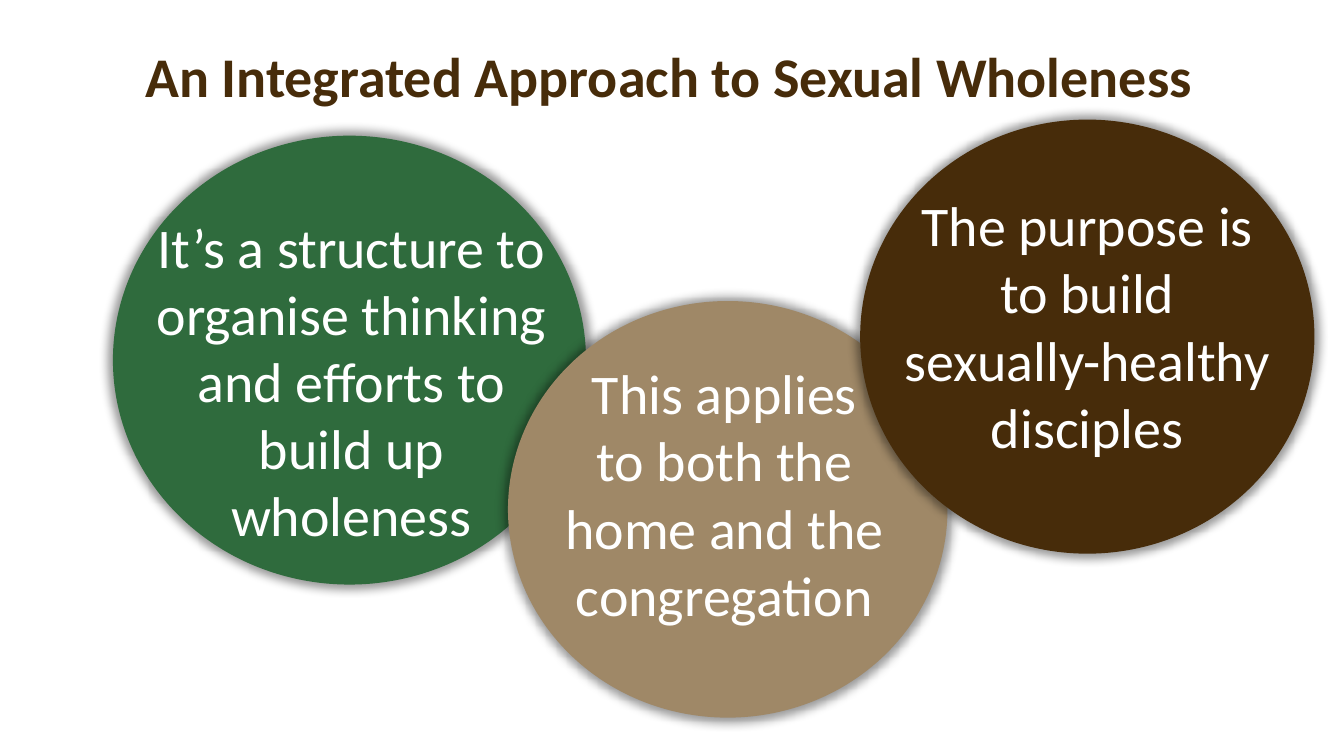
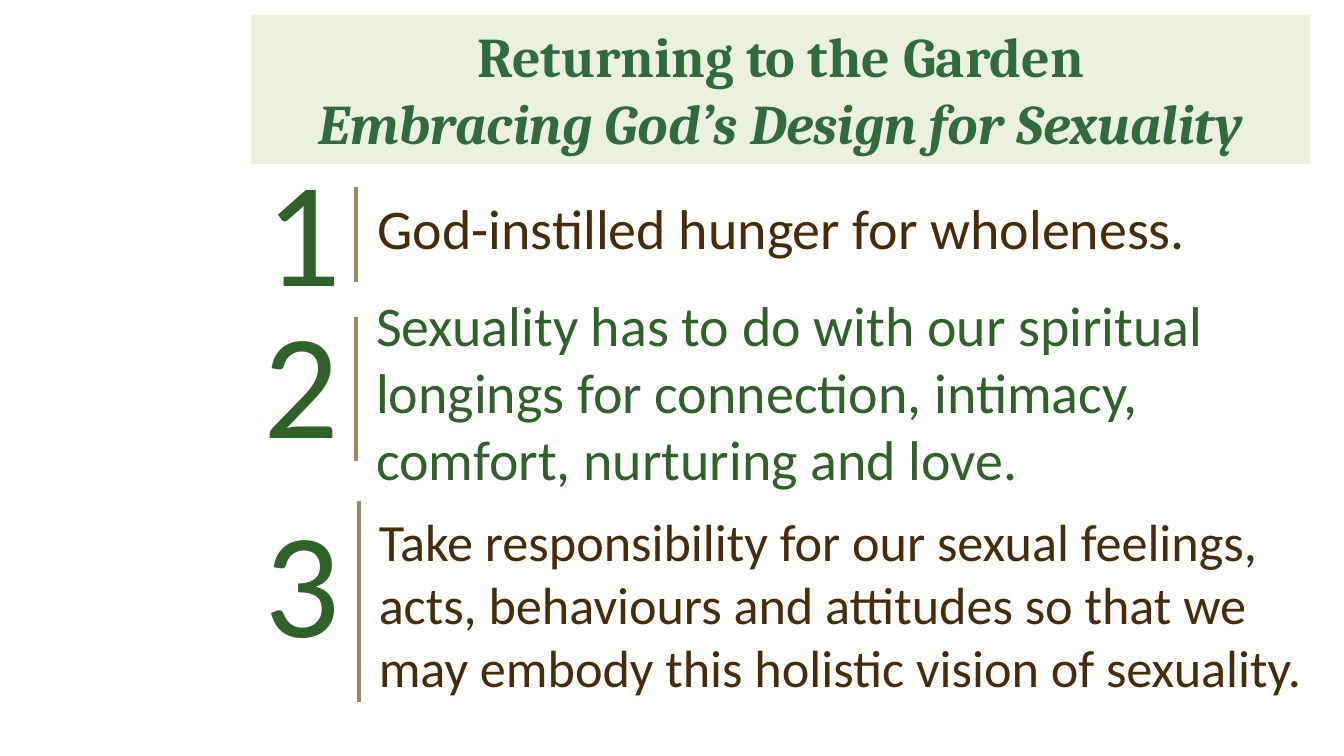
"""Build two slides on an integrated approach to sexual wholeness."""
from dataclasses import dataclass

from lxml import etree
from pptx import Presentation
from pptx import util as u
from pptx.dml import color as dml
from pptx.enum import shapes, text
from pptx.oxml import ns

HUES = {
    "brown": "472C0A",
    "green": "2F6B3D",
    "leaf": "2F6228",
    "tan": "9F8867",
    "pale": "EBF1DE",
    "white": "FFFFFF",
}
LEFT, MID = text.PP_ALIGN.LEFT, text.PP_ALIGN.CENTER
Box = tuple[float, float, float, float]


@dataclass(frozen=True)
class Style:
    size: float
    hue: str
    font: str = "Calibri"
    bold: bool = False
    align: text.PP_ALIGN = LEFT


@dataclass(frozen=True)
class Disc:
    oval: Box
    fill: str
    label: Box
    words: str


@dataclass(frozen=True)
class Point:
    num: Box
    rule: tuple[float, float, float]
    body: Box
    style: Style
    words: str


HEAD = Style(30, "brown", bold=True)
BAND = Style(30, "green", "Cambria", True, MID)
LABEL = Style(30, "white", align=MID)
NUMBER = Style(80, "leaf")

DISCS = [
    Disc((0.84, 1.01, 3.52, 3.34), "green", (1.01, 1.53, 3.21, 3.13),
         "It’s a structure to organise thinking and efforts to build up wholeness"),
    Disc((3.78, 2.24, 3.27, 3.1), "tan", (4.09, 2.62, 2.6, 2.63),
         "This applies to both the home and the congregation"),
    Disc((6.4, 0.89, 3.38, 3.23), "brown", (6.59, 1.37, 3, 2.63),
         "The purpose is to build sexually-healthy disciples"),
]
POINTS = [
    Point((1.88, 0.97, 0.89, 1.45), (2.65, 1.39, 2.1), (2.71, 1.39, 7.16, 0.68),
          Style(30, "brown"), "God-instilled hunger for wholeness."),
    Point((1.86, 2.1, 0.73, 1.45), (2.65, 2.36, 3.43), (2.7, 2.11, 6.81, 1.53),
          Style(30, "leaf"),
          "Sexuality has to do with our spiritual longings for connection, "
          "intimacy, comfort, nurturing and love."),
    Point((1.87, 3.58, 0.78, 1.45), (2.67, 3.73, 5.22), (2.72, 3.74, 7.26, 2.35),
          Style(28, "brown"),
          "Take responsibility for our sexual feelings, acts, behaviours and "
          "attitudes so that we may embody this holistic vision of sexuality."),
]


def tint(name: str) -> dml.RGBColor:
    """Return the named colour."""
    return dml.RGBColor.from_string(HUES[name])


def inch(box) -> list:
    """Turn plain numbers into lengths."""
    return [u.Inches(n) for n in box]


def paint(shape, hue: str) -> None:
    """Give a shape a solid fill."""
    shape.fill.solid()
    shape.fill.fore_color.rgb = tint(hue)


def write(shape, style: Style, *lines: str, slant: int = -1) -> None:
    """Write one paragraph per line, with the line at slant in italics."""
    frame = shape.text_frame
    frame.word_wrap = True
    frame.auto_size = text.MSO_AUTO_SIZE.NONE
    frame.vertical_anchor = text.MSO_ANCHOR.TOP
    for i, line in enumerate(lines):
        para = frame.add_paragraph() if i else frame.paragraphs[0]
        para.alignment = style.align
        run = para.add_run()
        run.text = line
        font = run.font
        font.name, font.size = style.font, u.Pt(style.size)
        font.bold, font.italic = style.bold, i == slant
        font.color.rgb = tint(style.hue)


def add_text(group, box: Box, style: Style, words: str) -> None:
    """Add a text box to a group."""
    write(group.shapes.add_textbox(*inch(box)), style, words)


def add_slide(deck, box: Box):
    """Add a title-only slide and place its title."""
    slide = deck.slides.add_slide(deck.slide_layouts[5])
    title = slide.shapes.title
    title.left, title.top, title.width, title.height = inch(box)
    return slide


def add_glow(shape) -> None:
    """Put a soft dark shadow round a shape."""
    shape.shadow.inherit = False
    effects = shape.element.spPr.find(ns.qn("a:effectLst"))
    outer = etree.SubElement(effects, ns.qn("a:outerShdw"),
                             blurRad=str(u.Pt(5)), dist="0", dir="0",
                             sx="102000", sy="102000",
                             algn="ctr", rotWithShape="0")
    black = etree.SubElement(outer, ns.qn("a:srgbClr"), val="000000")
    etree.SubElement(black, ns.qn("a:alpha"), val="40000")


def add_disc(slide, disc: Disc) -> None:
    """Draw a shaded oval with its label."""
    group = slide.shapes.add_group_shape()
    oval = group.shapes.add_shape(shapes.MSO_SHAPE.OVAL, *inch(disc.oval))
    paint(oval, disc.fill)
    oval.line.fill.background()
    add_glow(oval)
    add_text(group, disc.label, LABEL, disc.words)


def add_point(slide, num: int, point: Point) -> None:
    """Draw a numbered point with its upright rule."""
    group = slide.shapes.add_group_shape()
    add_text(group, point.body, point.style, point.words)
    add_text(group, point.num, NUMBER, str(num))
    x, top, end = point.rule
    rule = group.shapes.add_connector(shapes.MSO_CONNECTOR.STRAIGHT,
                                      *inch((x, top, x, end)))
    rule.line.color.rgb = tint("tan")
    rule.line.width = u.Pt(2.25)
    etree.SubElement(rule.element.spPr, ns.qn("a:effectLst"))


def main() -> None:
    """Build and save the deck."""
    deck = Presentation()
    deck.slide_width = u.Inches(10)
    deck.slide_height = u.Inches(10 * 9 / 16)

    slide = add_slide(deck, (0.98, 0.26, 8.45, 0.73))
    write(slide.shapes.title, HEAD, "An Integrated Approach to Sexual Wholeness")
    for disc in DISCS:
        add_disc(slide, disc)

    slide = add_slide(deck, (1.87, 0.11, 7.88, 1.11))
    paint(slide.shapes.title, "pale")
    write(slide.shapes.title, BAND, "Returning to the Garden",
          "Embracing God’s Design for Sexuality", slant=1)
    for num, point in enumerate(POINTS, 1):
        add_point(slide, num, point)

    deck.save("out.pptx")


if __name__ == "__main__":
    main()
